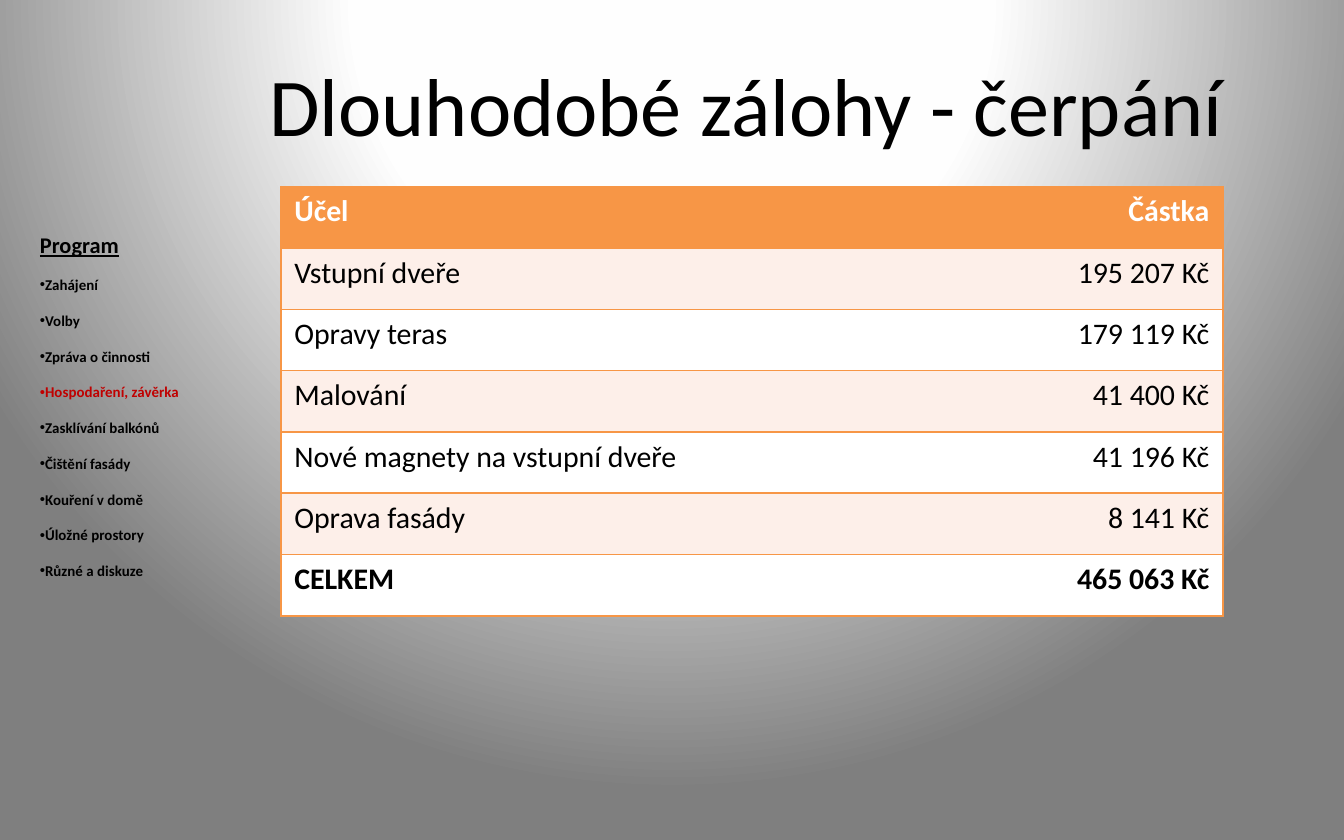
from dataclasses import dataclass

from pptx import Presentation
from pptx.dml.color import RGBColor
from pptx.enum.text import MSO_ANCHOR, MSO_AUTO_SIZE, PP_ALIGN
from pptx.oxml import parse_xml
from pptx.oxml.ns import nsdecls
from pptx.util import Cm, Pt


@dataclass(frozen=True)
class Theme:
    font: str = "Calibri"
    text: str = "000000"
    light: str = "FFFFFF"
    accent: str = "F79646"
    band: str = "FDEFE9"
    current: str = "C00000"
    title_size: int = 44
    heading_size: int = 12
    item_size: int = 8
    table_size: int = 16
    border: float = 1
    # Background gradient: position in percent and colour
    backdrop: tuple = ((0, "FFFFFF"), (40, "FEFEFE"), (100, "7F7F7F"))


THEME = Theme()
NO_STYLE = "{2D5ABB26-0587-4C30-8999-92F81FD0307C}"

AGENDA = ["Zahájení", "Volby", "Zpráva o činnosti", "Hospodaření, závěrka",
          "Zasklívání balkónů", "Čištění fasády", "Kouření v domě",
          "Úložné prostory", "Různé a diskuze"]
CURRENT = "Hospodaření, závěrka"
ROWS = [("Účel", "Částka"),
        ("Vstupní dveře", "195 207 Kč"),
        ("Opravy teras", "179 119 Kč"),
        ("Malování", "41 400 Kč"),
        ("Nové magnety na vstupní dveře", "41 196 Kč"),
        ("Oprava fasády", "8 141 Kč"),
        ("CELKEM", "465 063 Kč")]


def write(p, text, size, color=THEME.text, **style):
    """Add one formatted run to a paragraph."""
    r = p.add_run()
    r.text = text
    values = {"name": THEME.font, "size": Pt(size), **style}
    for name, value in values.items():
        setattr(r.font, name, value)
    r.font.color.rgb = RGBColor.from_string(color)


def place(sp, box):
    for name, value in zip(("left", "top", "width", "height"), box):
        setattr(sp, name, Cm(value))


def add_backdrop(s):
    stops = "".join(
        f'<a:gs pos="{pos * 1000}"><a:srgbClr val="{color}"/></a:gs>'
        for pos, color in THEME.backdrop)
    s._element.cSld.insert(0, parse_xml(
        f'<p:bg {nsdecls("p", "a")}><p:bgPr><a:gradFill rotWithShape="1">'
        f'<a:gsLst>{stops}</a:gsLst><a:path path="circle">'
        '<a:fillToRect l="50000" t="-80000" r="50000" b="180000"/></a:path>'
        '</a:gradFill><a:effectLst/></p:bgPr></p:bg>'))


def add_title(s, box, text):
    sp = s.shapes.title
    place(sp, box)
    tf = sp.text_frame
    tf.vertical_anchor = MSO_ANCHOR.MIDDLE
    p = tf.paragraphs[0]
    p.alignment = PP_ALIGN.CENTER
    write(p, text, THEME.title_size)


def add_agenda(s, box, heading, items, current):
    sp = s.placeholders[1]
    place(sp, box)
    tf = sp.text_frame
    tf.word_wrap = True
    tf.auto_size = MSO_AUTO_SIZE.SHAPE_TO_FIT_TEXT
    tf.vertical_anchor = MSO_ANCHOR.TOP
    for i, text in enumerate([heading, *items]):
        p = tf.paragraphs[0] if i == 0 else tf.add_paragraph()
        p.line_spacing = 2.0
        p.space_before = Pt(0)
        pPr = p._p.get_or_add_pPr()
        pPr.set("marL", "0")
        pPr.set("indent", "0")
        bullet = '<a:buChar {} char="•"/>' if i else "<a:buNone {}/>"
        pPr.append(parse_xml(bullet.format(nsdecls("a"))))
        if i == 0:
            write(p, text, THEME.heading_size, bold=True, underline=True)
        else:
            color = THEME.current if text == current else THEME.text
            write(p, text, THEME.item_size, color, bold=True)


def add_borders(cell, sides):
    """Draw the named sides and hide the others."""
    tcPr = cell._tc.get_or_add_tcPr()
    for i, side in enumerate(("L", "R", "T", "B")):
        fill = (f'<a:solidFill><a:srgbClr val="{THEME.accent}"/></a:solidFill>'
                if side in sides else "<a:noFill/>")
        tcPr.insert(i, parse_xml(
            f'<a:ln{side} {nsdecls("a")} w="{Pt(THEME.border)}">'
            f'{fill}</a:ln{side}>'))


def add_costs(s, box, rows, widths):
    left, top, width, height = map(Cm, box)
    frame = s.shapes.add_table(len(rows), len(widths), left, top, width, height)
    table = frame.table
    table._tbl.tblPr.find("{*}tableStyleId").text = NO_STYLE
    for column, value in zip(table.columns, widths):
        column.width = Cm(value)
    last = len(rows) - 1
    for i, values in enumerate(rows):
        table.rows[i].height = int(height / len(rows))
        # Header row, then alternating bands
        fill = THEME.accent if i == 0 else (THEME.light, THEME.band)[i % 2]
        color = THEME.light if i == 0 else THEME.text
        for j, text in enumerate(values):
            cell = table.cell(i, j)
            cell.fill.solid()
            cell.fill.fore_color.rgb = RGBColor.from_string(fill)
            p = cell.text_frame.paragraphs[0]
            p.alignment = PP_ALIGN.RIGHT if j else PP_ALIGN.LEFT
            write(p, text, THEME.table_size, color, bold=i in (0, last))
            add_borders(cell, "RTB" if j else "LTB")


def main():
    prs = Presentation()
    prs.slide_width, prs.slide_height = Cm(25.4), Cm(15.88)
    s = prs.slides.add_slide(prs.slide_layouts[1])
    add_backdrop(s)
    add_title(s, (4.09, 0.64, 20.04, 2.64), "Dlouhodobé zálohy - čerpání")
    add_agenda(s, (0.5, 3.73, 3.2, 7.44), "Program", AGENDA, CURRENT)
    add_costs(s, (5.31, 3.53, 17.8, 8.12), ROWS, (10.95, 6.85))
    prs.save("out.pptx")


if __name__ == "__main__":
    main()
